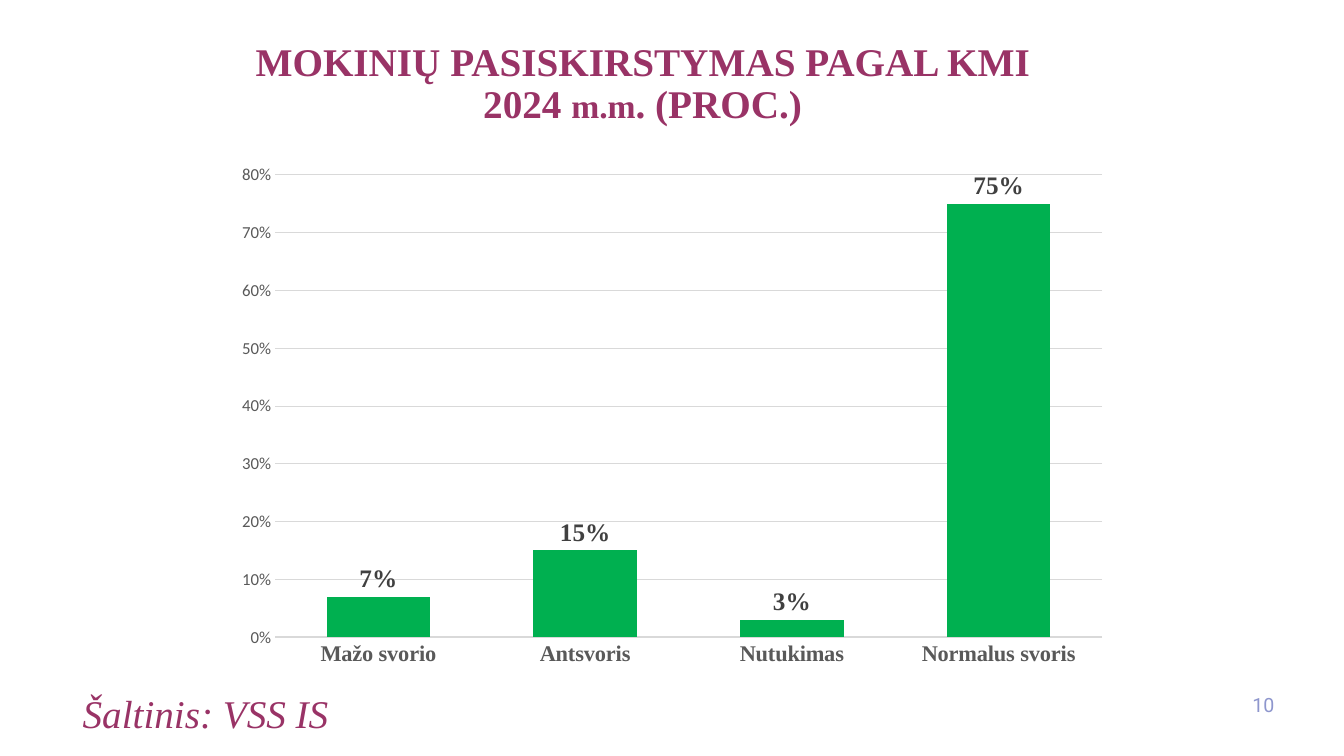
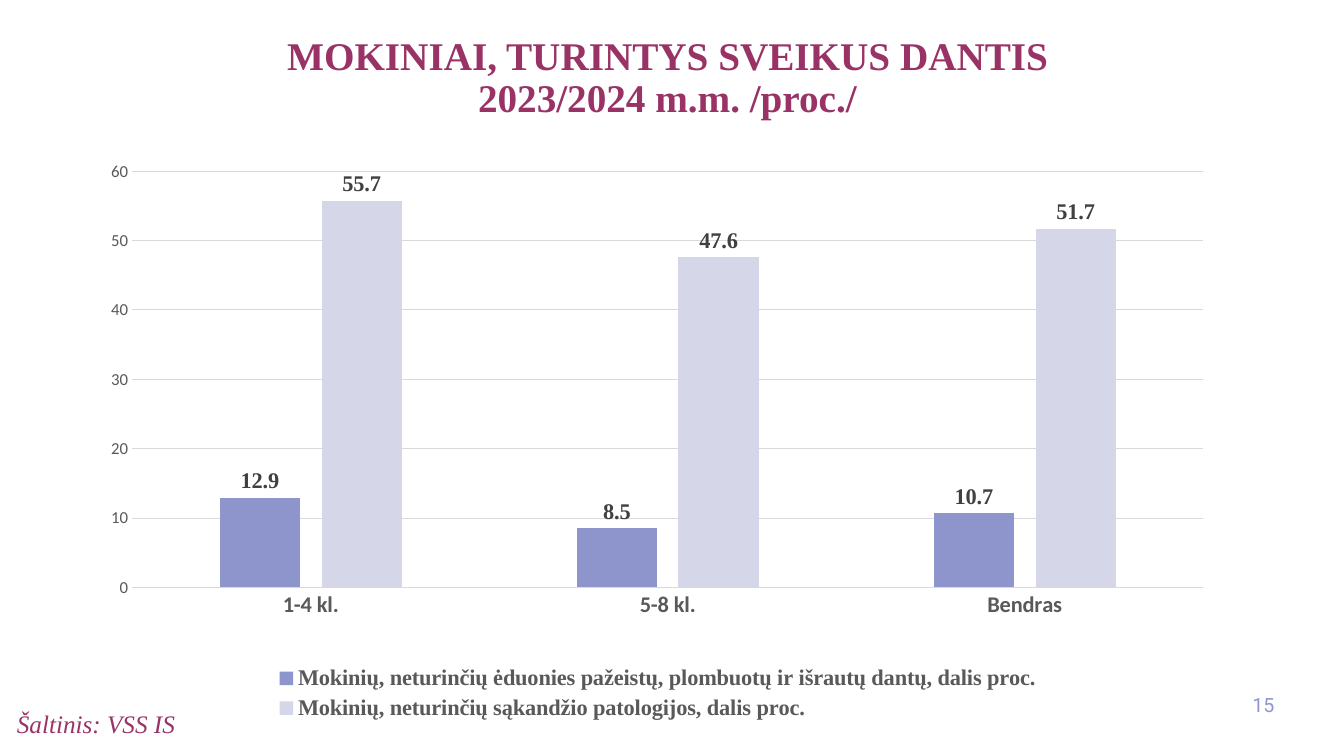
from dataclasses import dataclass

from lxml import etree
from pptx import Presentation
from pptx import util as u
from pptx.chart import data as chart_data
from pptx.dml.color import RGBColor
from pptx.enum import chart as ce
from pptx.enum import text as te
from pptx.oxml import ns

Pt = u.Pt


@dataclass(frozen=True)
class Theme:
    plum: str = "993366"
    periwinkle: str = "8E96CD"
    green: str = "00B050"
    bar_blue: str = "8D95CC"
    bar_pale: str = "D5D7E8"
    axis_text: str = "595959"
    label_text: str = "404040"
    grid: str = "D9D9D9"
    black: str = "000000"
    serif: str = "Times New Roman"
    sans: str = "Calibri"
    number_font: str = "Roboto"
    title: int = 28
    title_small: int = 24
    page_number: int = 14
    chart: int = 10
    value_axis: int = 12
    category: int = 16
    legend: int = 16
    grid_width: float = 0.75


T = Theme()
SLIDE_SIZE = (960, 540)
TITLE_ONLY = 5
PAGE_NUMBER_BOX = (880, 489, 37.5, 29)


def assign(target, **values):
    for attribute, value in values.items():
        setattr(target, attribute, value)


def style_font(font, size, color, name=T.serif, **flags):
    assign(font, size=Pt(size), name=name, **flags)
    font.color.rgb = RGBColor.from_string(color)


def fill_frame(frame, lines, align, anchor=te.MSO_ANCHOR.TOP, spacing=None, **fmt):
    """Write lines of (text, size) runs as one paragraph with line breaks."""
    assign(frame, word_wrap=True, auto_size=te.MSO_AUTO_SIZE.NONE,
           vertical_anchor=anchor)
    paragraph = frame.paragraphs[0]
    assign(paragraph, alignment=align, line_spacing=spacing)
    for index, line in enumerate(lines):
        if index:
            paragraph.add_line_break()
        for wording, size in line:
            run = paragraph.add_run()
            run.text = wording
            style_font(run.font, size, **fmt)


def add_title(slide, box, lines):
    title = slide.shapes.title
    assign(title, **dict(zip(("left", "top", "width", "height"), map(Pt, box))))
    fill_frame(title.text_frame, lines, te.PP_ALIGN.CENTER, spacing=0.9,
               color=T.plum, bold=True)


def add_note(slide, box, wording, size, align=te.PP_ALIGN.LEFT, **fmt):
    note = slide.shapes.add_textbox(*map(Pt, box))
    fill_frame(note.text_frame, [[(wording, size)]], align, **fmt)


def set_plot_box(chart, fractions):
    """Fix the inner plot area as x, y, width, height fractions of the chart."""
    plot_area = chart.element.find(".//" + ns.qn("c:plotArea"))
    for old in plot_area.findall(ns.qn("c:layout")):
        plot_area.remove(old)
    layout = etree.Element(ns.qn("c:layout"))
    manual = etree.SubElement(layout, ns.qn("c:manualLayout"))
    settings = [("layoutTarget", "inner"), ("xMode", "edge"), ("yMode", "edge"),
                *zip("xywh", fractions)]
    for tag, value in settings:
        etree.SubElement(manual, ns.qn("c:" + tag)).set("val", str(value))
    plot_area.insert(0, layout)


def style_axes(chart, top, step, number_format, category_font, category_line):
    category, value = chart.category_axis, chart.value_axis
    for axis in (category, value):
        assign(axis, major_tick_mark=ce.XL_TICK_MARK.NONE,
               minor_tick_mark=ce.XL_TICK_MARK.NONE)
    style_font(category.tick_labels.font, T.category, T.axis_text,
               category_font, bold=True)
    style_font(value.tick_labels.font, T.value_axis, T.axis_text, T.sans, bold=False)
    assign(value, minimum_scale=0, maximum_scale=top, major_unit=step,
           has_major_gridlines=True)
    assign(value.tick_labels, number_format=number_format,
           number_format_is_linked=False)
    value.format.line.fill.background()
    for line, width in ((category.format.line, category_line),
                        (value.major_gridlines.format.line, T.grid_width)):
        line.color.rgb = RGBColor.from_string(T.grid)
        line.width = Pt(width)


def add_column_chart(slide, box, plot_box, categories, series, axes, gap, overlap,
                     label_size, label_format, legend=False):
    """Draw clustered columns; series holds (name, values, color) rows."""
    data = chart_data.CategoryChartData()
    data.categories = categories
    for name, values, _ in series:
        data.add_series(name, values)
    chart = slide.shapes.add_chart(ce.XL_CHART_TYPE.COLUMN_CLUSTERED,
                                   *map(Pt, box), data).chart
    style_font(chart.font, T.chart, T.black, T.sans)
    assign(chart, has_title=False, has_legend=legend)
    if legend:
        assign(chart.legend, position=ce.XL_LEGEND_POSITION.BOTTOM,
               include_in_layout=False)
        style_font(chart.legend.font, T.legend, T.axis_text, bold=True)
    style_axes(chart, **axes)
    plot = chart.plots[0]
    assign(plot, gap_width=gap, overlap=overlap, vary_by_categories=False)
    for columns, (_, _, color) in zip(plot.series, series):
        columns.format.fill.solid()
        columns.format.fill.fore_color.rgb = RGBColor.from_string(color)
        columns.invert_if_negative = False
        labels = columns.data_labels
        assign(labels, show_value=True, number_format=label_format,
               number_format_is_linked=False,
               position=ce.XL_LABEL_POSITION.OUTSIDE_END)
        style_font(labels.font, label_size, T.label_text, bold=True)
    set_plot_box(chart, plot_box)


def add_chart_slide(deck, number, title_box, title_lines, source_box, source_size,
                    chart):
    slide = deck.slides.add_slide(deck.slide_layouts[TITLE_ONLY])
    add_title(slide, title_box, title_lines)
    add_column_chart(slide, **chart)
    add_note(slide, source_box, "Šaltinis: VSS IS", source_size,
             color=T.plum, italic=True)
    add_note(slide, PAGE_NUMBER_BOX, str(number), T.page_number,
             te.PP_ALIGN.RIGHT, anchor=te.MSO_ANCHOR.MIDDLE,
             color=T.periwinkle, name=T.number_font)


def add_weight_slide(deck):
    add_chart_slide(
        deck, 10, (52, 26.5, 814, 99.5),
        [[("MOKINIŲ PASISKIRSTYMAS PAGAL KMI", T.title)],
         [("2024 ", T.title), ("m.m", T.title_small), (". (PROC.)", T.title)]],
        (52, 489, 453.5, 27.5), 28,
        dict(box=(160, 110, 640, 374), plot_box=(0.057, 0.04, 0.923, 0.883),
             categories=["Mažo svorio", "Antsvoris", "Nutukimas", "Normalus svoris"],
             series=[("Series 1", (0.07, 0.15, 0.03, 0.75), T.green)],
             axes=dict(top=0.8, step=0.1, number_format="0%",
                       category_font=T.serif, category_line=1),
             gap=100, overlap=-24, label_size=18, label_format="0%"))


def add_teeth_slide(deck):
    add_chart_slide(
        deck, 15, (-6.5, 22.5, 966.5, 85.5),
        [[("MOKINIAI, TURINTYS SVEIKUS DANTIS", T.title)],
         [("2023/2024 m.m. /proc./", T.title)]],
        (5, 502.5, 453.5, 27.5), 18,
        dict(box=(60, 98, 820, 420), plot_box=(0.042, 0.058, 0.933, 0.708),
             categories=["1-4 kl.", "5-8 kl.", "Bendras"],
             series=[("Mokinių, neturinčių ėduonies pažeistų, plombuotų ir "
                      "išrautų dantų, dalis proc.", (12.9, 8.5, 10.7), T.bar_blue),
                     ("Mokinių, neturinčių sąkandžio patologijos, dalis proc.",
                      (55.7, 47.6, 51.7), T.bar_pale)],
             axes=dict(top=60, step=10, number_format="General",
                       category_font=T.sans, category_line=T.grid_width),
             gap=219, overlap=-27, label_size=16, label_format="General",
             legend=True))


def main():
    deck = Presentation()
    deck.slide_width, deck.slide_height = map(Pt, SLIDE_SIZE)
    add_weight_slide(deck)
    add_teeth_slide(deck)
    deck.save("out.pptx")


if __name__ == "__main__":
    main()
